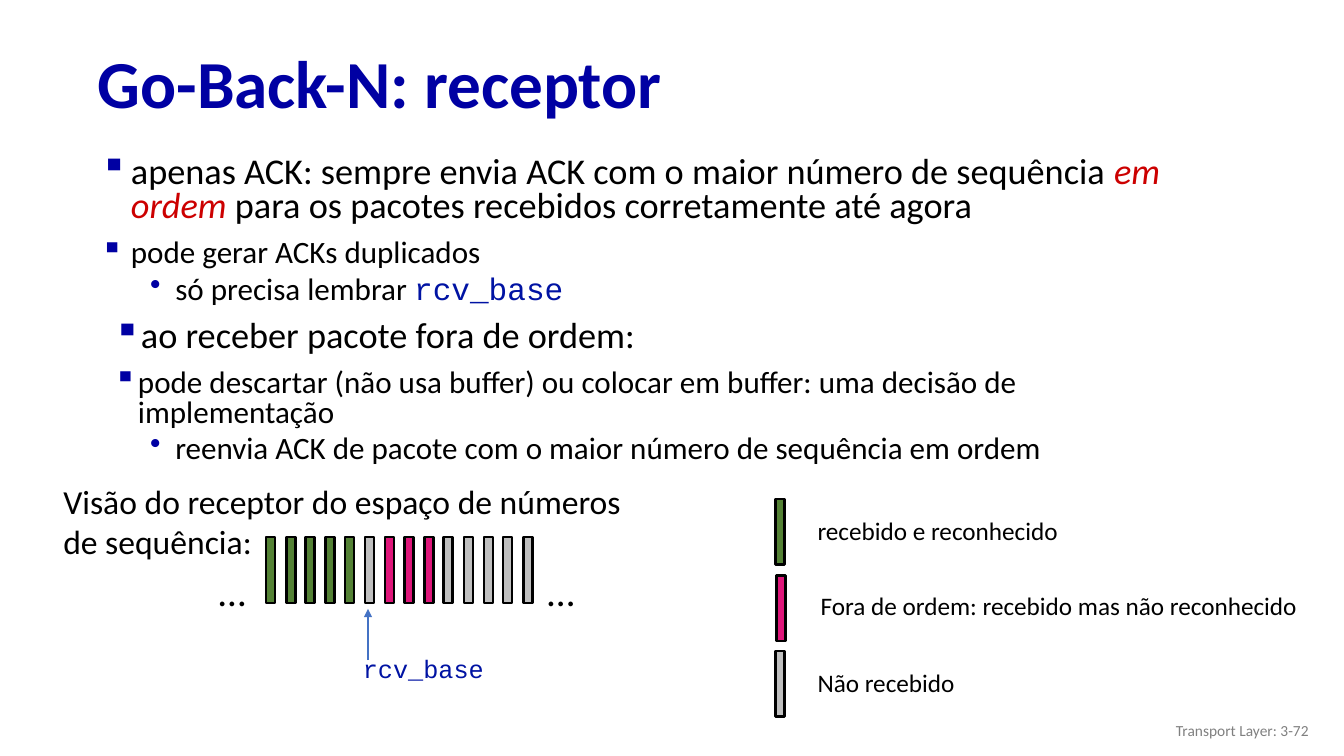
"""Build the slide on the Go-Back-N receiver."""
from lxml import etree
from pptx import Presentation
from pptx.dml.color import RGBColor
from pptx.enum.shapes import MSO_CONNECTOR, MSO_SHAPE
from pptx.enum.text import MSO_ANCHOR, PP_ALIGN
from pptx.oxml.ns import qn
from pptx.util import Pt

RECT = MSO_SHAPE.RECTANGLE
STRAIGHT = MSO_CONNECTOR.STRAIGHT
TOP, MIDDLE = MSO_ANCHOR.TOP, MSO_ANCHOR.MIDDLE
LEFT, RIGHT = PP_ALIGN.LEFT, PP_ALIGN.RIGHT
PX = 9144
SANS, MONO = "Calibri", "Courier New"
BLACK, NAVY, CODE, RED = "000000", "0000A3", "0013A3", "CC0000"
GREEN, PINK, GRAY = "548235", "DF167A", "BFBFBF"
BAR_W, BAR_H, BAR_STEP = 9, 65, 19.6


def color(value):
    return RGBColor.from_string(value)


def add_text(box, content, size, ink=BLACK, font=SANS, wrap=False, anchor=TOP, align=LEFT):
    frame = slide.shapes.add_textbox(*(PX * n for n in box)).text_frame
    frame.word_wrap = wrap
    frame.vertical_anchor = anchor
    paragraph = frame.paragraphs[0]
    paragraph.alignment = align
    run = paragraph.add_run()
    run.text = content
    run.font.size, run.font.name = Pt(size), font
    run.font.color.rgb = color(ink)
    return run


prs = Presentation()
prs.slide_width, prs.slide_height = 1333 * PX, 750 * PX
slide = prs.slides.add_slide(prs.slide_layouts[6])

title = add_text((87, 32, 1214, 98), "Go-Back-N: receptor", 48, NAVY, wrap=True, anchor=MIDDLE)
title.font.bold = True

rules = slide.shapes.add_textbox(88 * PX, 150 * PX, 1128 * PX, 312 * PX).text_frame
rules.word_wrap = True
points = [
    ("▪", 32, 30, 25.9, [
        ("apenas ACK: sempre envia ACK com o maior número de sequência ", BLACK, SANS),
        ("em ordem ", RED, SANS),
        ("para os pacotes recebidos corretamente até agora", BLACK, SANS)]),
    ("▪", 32, 30, 22.2, [("pode gerar ACKs duplicados", BLACK, SANS)]),
    ("•", 76, 25, 22.2, [("só precisa lembrar ", BLACK, SANS), ("rcv_base", CODE, MONO)]),
    ("▪", 39, 24, 25.9, [("ao receber pacote fora de ordem:", BLACK, SANS)]),
    ("▪", 39, 24, 22.2, [
        ("pode descartar (não usa buffer) ou colocar em buffer: uma decisão de implementação",
         BLACK, SANS)]),
    ("•", 76, 25, 22.2, [
        ("reenvia ACK de pacote com o maior número de sequência em ordem", BLACK, SANS)]),
]
for index, (bullet, margin, hang, size, pieces) in enumerate(points):
    point = rules.add_paragraph() if index else rules.paragraphs[0]
    point.level = 1 if bullet == "•" else 0
    point.line_spacing = 0.8
    point.space_before = Pt(5 if bullet == "•" else 10)
    props = point._p.get_or_add_pPr()
    props.set("marL", str(margin * PX))
    props.set("indent", str(-hang * PX))
    bullet_color = etree.SubElement(props, qn("a:buClr"))
    etree.SubElement(bullet_color, qn("a:srgbClr")).set("val", NAVY)
    etree.SubElement(props, qn("a:buChar")).set("char", bullet)
    for words, ink, font in pieces:
        piece = point.add_run()
        piece.text = words
        piece.font.size, piece.font.name = Pt(size), font
        piece.font.color.rgb = color(ink)
        piece.font.italic = ink == RED

add_text((53, 472, 594, 91), "Visão do receptor do espaço de números de sequência:", 24, wrap=True)
for dots_left in (207, 533):
    add_text((dots_left, 558, 47, 57), "…", 28)

window = [GREEN] * 5 + [GRAY] + [PINK] * 3 + [GRAY] * 5
bars = [(round(264 + BAR_STEP * i), 533, fill) for i, fill in enumerate(window)]

legend = [
    (769, 495, GREEN, (801, 506, 262, 40), "recebido e reconhecido"),
    (770, 571, PINK, (804, 581, 499, 40), "Fora de ordem: recebido mas não reconhecido"),
    (769, 646, GRAY, (801, 657, 158, 40), "Não recebido"),
]
for left, top, fill, label_box, label in legend:
    bars.append((left, top, fill))
    add_text(label_box, label, 18)

for left, top, fill in bars:
    packet = slide.shapes.add_shape(RECT, left * PX, top * PX, BAR_W * PX, BAR_H * PX)
    packet.shadow.inherit = False
    packet.fill.solid()
    packet.fill.fore_color.rgb = color(fill)
    packet.line.color.rgb = color(BLACK)
    packet.line.width = Pt(1.75)

add_text((350, 643, 141, 40), "rcv_base", 18, CODE, MONO)
base_arrow = slide.shapes.add_connector(STRAIGHT, 365 * PX, 655 * PX, 365 * PX, 604 * PX)
base_arrow.line.color.rgb = color("4472C4")
base_arrow.line.width = Pt(1.75)
etree.SubElement(base_arrow.line._get_or_add_ln(), qn("a:tailEnd")).set("type", "triangle")
etree.SubElement(base_arrow._element.spPr, qn("a:effectLst"))

add_text((1008, 705, 300, 40), "Transport Layer: 3-72", 11, "808080",
         wrap=True, anchor=MIDDLE, align=RIGHT)

prs.save("out.pptx")
